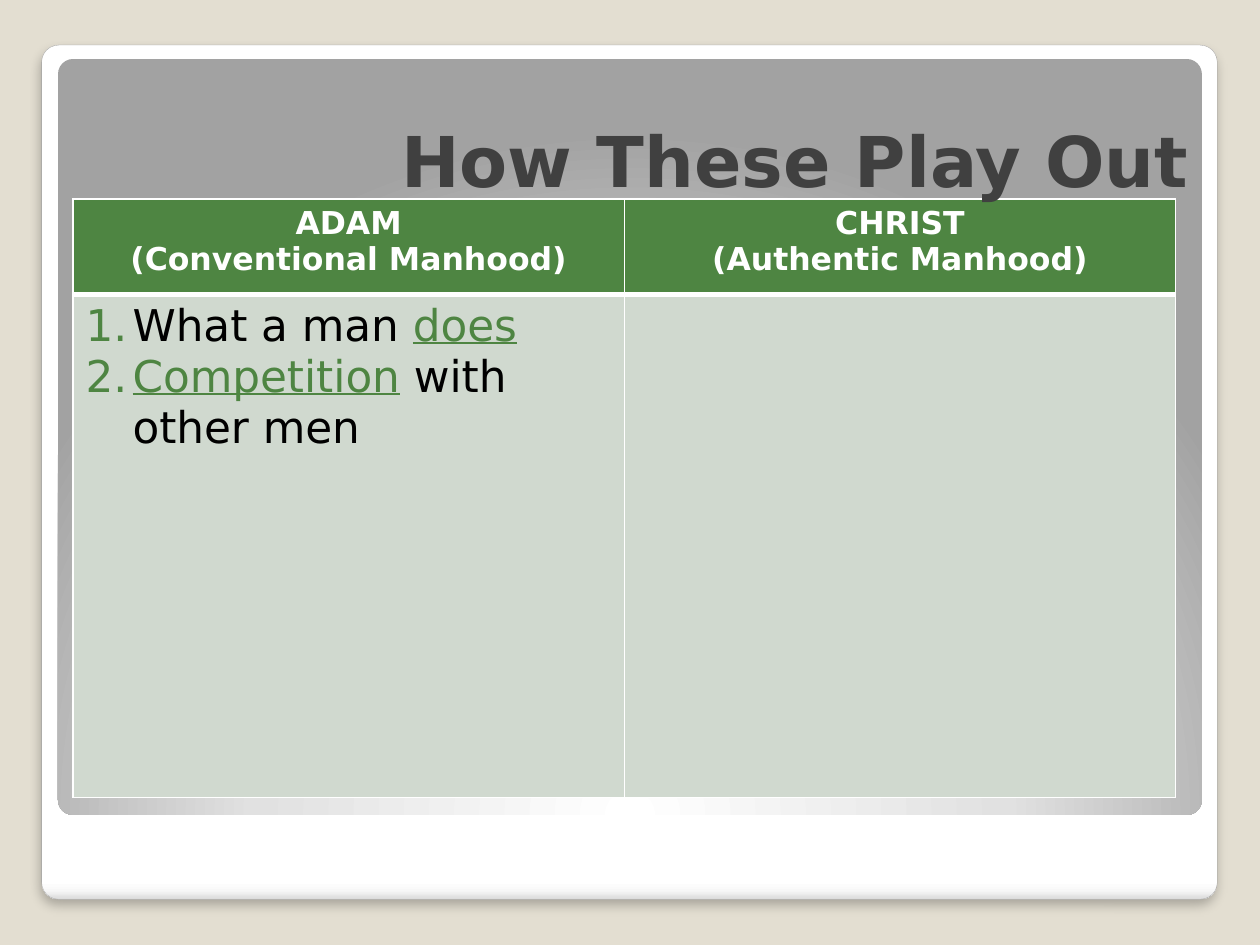
"""Build the slide that sets Adam beside Christ in a two-column table."""
import pptx
import pptx.util
import pptx.dml.color
import pptx.enum.shapes
import pptx.enum.text
import pptx.oxml
import pptx.oxml.ns

Cm, Pt = pptx.util.Cm, pptx.util.Pt
ALIGN = pptx.enum.text.PP_ALIGN
FONT, GREEN, WHITE = "DejaVu Sans", "4E8542", "FFFFFF"


def tint(hue):
    return pptx.dml.color.RGBColor.from_string(hue)


def node(xml):
    return pptx.oxml.parse_xml(xml.replace(">", " " + pptx.oxml.ns.nsdecls("a") + ">", 1))


deck = pptx.Presentation()
deck.slide_width, deck.slide_height = Cm(25.4), Cm(19.05)
slide = deck.slides.add_slide(deck.slide_layouts[5])
slide.background.fill.solid()
slide.background.fill.fore_color.rgb = tint("E3DED1")

panels = [
    ((0.84, 0.91, 23.7, 17.22),
     [(0, WHITE), (98, WHITE), (99, "F7F7F7"), (100, "DADADA")],
     '<a:lin ang="5400000" scaled="0"/>'),
    ((1.17, 1.19, 23.06, 15.24),
     [(0, WHITE), (55, "E1E1E1"), (100, "A2A2A2")],
     '<a:path path="circle"><a:fillToRect l="50000" t="175000" r="50000" b="-75000"/></a:path>'),
]
cards = []
for box, stops, way in panels:
    card = slide.shapes.add_shape(
        pptx.enum.shapes.MSO_SHAPE.ROUNDED_RECTANGLE, *map(Cm, box))
    card.adjustments[0] = 0.02
    card.shadow.inherit = False
    card.line.fill.background()
    marks = "".join(f'<a:gs pos="{pos * 1000}"><a:srgbClr val="{hue}"/></a:gs>'
                    for pos, hue in stops)
    geom = card._element.spPr.find(pptx.oxml.ns.qn("a:prstGeom"))
    geom.addnext(node(f'<a:gradFill rotWithShape="1"><a:gsLst>{marks}</a:gsLst>{way}</a:gradFill>'))
    cards.append(card)

outer = cards[0]
outer.line.color.rgb = tint("A4A4A4")
outer.line.width = Pt(0.16)
glow = outer._element.spPr.find(pptx.oxml.ns.qn("a:effectLst"))
glow.append(node(
    f'<a:outerShdw blurRad="{Pt(6)}" dist="{Pt(4)}" dir="5400000" algn="t" rotWithShape="0">'
    '<a:srgbClr val="000000"><a:alpha val="25000"/></a:srgbClr></a:outerShdw>'))

table = slide.shapes.add_table(2, 2, Cm(1.47), Cm(4.01), Cm(22.23), Cm(12.07)).table
table.rows[0].height, table.rows[1].height = Cm(1.93), Cm(10.14)
for row, fill in enumerate([GREEN, "D0D9CF"]):
    for cell in table.rows[row].cells:
        for side in "LRTB":
            width = 3 if side == "TB"[1 - row] else 1
            cell._tc.get_or_add_tcPr().append(node(
                f'<a:ln{side} w="{Pt(width)}"><a:solidFill><a:srgbClr val="{WHITE}"/>'
                f'</a:solidFill></a:ln{side}>'))
        cell.fill.solid()
        cell.fill.fore_color.rgb = tint(fill)

heads = ["ADAM\n(Conventional Manhood)", "CHRIST\n(Authentic Manhood)"]
for cell, words in zip(table.rows[0].cells, heads):
    cell.text = words
    for para in cell.text_frame.paragraphs:
        para.alignment = ALIGN.CENTER
        para.font.name, para.font.size, para.font.bold = FONT, Pt(18), True
        para.font.color.rgb = tint(WHITE)

points = [
    [("What a man ", False), ("does", True)],
    [("Competition", True), (" with other men", False)],
]
frame = table.cell(1, 0).text_frame
frame.text = "\n" * (len(points) - 1)
for para, parts in zip(frame.paragraphs, points):
    para.font.name, para.font.size, para.font.bold = FONT, Pt(25), False
    props = para._p.get_or_add_pPr()
    props.set("marL", str(Cm(0.95)))
    props.set("indent", str(-Cm(0.95)))
    props.insert(0, node(f'<a:buClr><a:srgbClr val="{GREEN}"/></a:buClr>'))
    props.insert(1, node('<a:buFont typeface="+mj-lt"></a:buFont>'))
    props.insert(2, node('<a:buAutoNum type="arabicPeriod"></a:buAutoNum>'))
    for words, key in parts:
        run = para.add_run()
        run.text = words
        run.font.underline = key
        run.font.color.rgb = tint(GREEN if key else "000000")

title = slide.shapes.title
title.left, title.top, title.width, title.height = map(Cm, (1.47, 1.27, 22.73, 2.92))
title.text_frame.text = "How These Play Out"
title.text_frame.auto_size = pptx.enum.text.MSO_AUTO_SIZE.NONE
title.text_frame.vertical_anchor = pptx.enum.text.MSO_ANCHOR.BOTTOM
para = title.text_frame.paragraphs[0]
para.alignment = ALIGN.RIGHT
para.font.name, para.font.size, para.font.bold = FONT, Pt(40), True
para.font.color.rgb = tint("404040")
slide.shapes._spTree.append(title._element)

deck.save("out.pptx")
